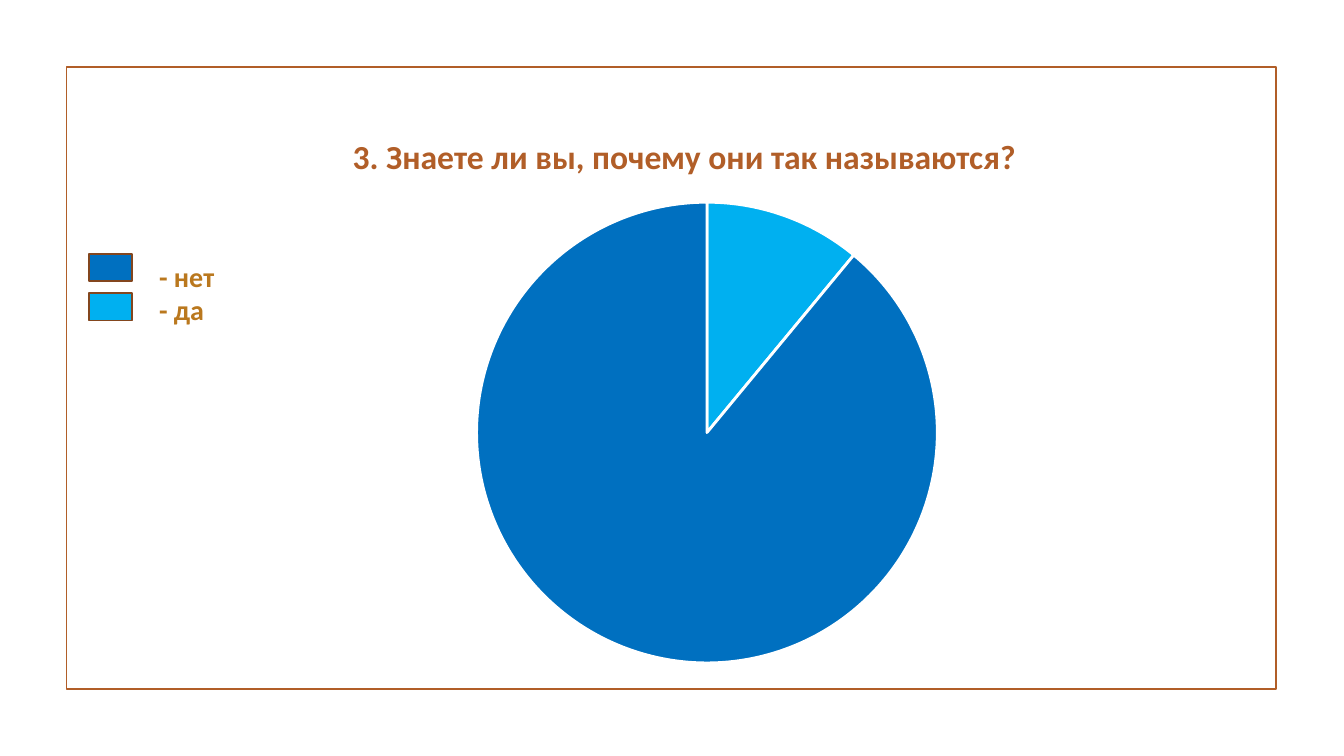
from pptx import Presentation
from pptx.chart.data import CategoryChartData
from pptx.dml.color import RGBColor
from pptx.enum.chart import XL_CHART_TYPE
from pptx.enum.shapes import MSO_SHAPE
from pptx.enum.text import MSO_AUTO_SIZE, PP_ALIGN
from pptx.util import Pt

PIE = XL_CHART_TYPE.PIE
RECT = MSO_SHAPE.RECTANGLE
GROW = MSO_AUTO_SIZE.SHAPE_TO_FIT_TEXT
LEFT, CENTER = PP_ALIGN.LEFT, PP_ALIGN.CENTER

RUST, BROWN, OCHRE = "B15E28", "83461E", "BA781E"
BLUE, SKY, WHITE, BLACK = "0070C0", "00B0F0", "FFFFFF", "000000"


def color(value):
    return RGBColor.from_string(value)


class SlideBuilder:
    font = "Calibri"
    line_width = 1.25

    def __init__(self, slide):
        self.s = slide

    def rect(self, x, y, w, h, line, fill=None):
        sp = self.s.shapes.add_shape(RECT, Pt(x), Pt(y), Pt(w), Pt(h))
        sp.shadow.inherit = False
        if fill:
            sp.fill.solid()
            sp.fill.fore_color.rgb = color(fill)
        else:
            sp.fill.background()
        sp.line.color.rgb = color(line)
        sp.line.width = Pt(self.line_width)

    def text(self, x, y, w, h, lines, size, ink, align=LEFT):
        sp = self.s.shapes.add_textbox(Pt(x), Pt(y), Pt(w), Pt(h))
        tf = sp.text_frame
        tf.word_wrap = True
        tf.auto_size = GROW
        tf.text = "\n".join(lines)
        for p in tf.paragraphs:
            p.alignment = align
            for r in p.runs:
                r.font.name = self.font
                r.font.size = Pt(size)
                r.font.bold = True
                r.font.color.rgb = color(ink)

    def pie(self, x, y, w, h, values, fills):
        data = CategoryChartData()
        data.categories = [str(i + 1) for i in range(len(values))]
        data.add_series("Series 1", values)
        chart = self.s.shapes.add_chart(
            PIE, Pt(x), Pt(y), Pt(w), Pt(h), data).chart
        chart.has_title = False
        chart.has_legend = False
        chart.font.name = self.font
        chart.font.size = Pt(10)
        chart.font.color.rgb = color(BLACK)
        plot = chart.plots[0]
        plot.vary_by_categories = True
        for i, fill in enumerate(fills):
            fmt = plot.series[0].points[i].format
            fmt.fill.solid()
            fmt.fill.fore_color.rgb = color(fill)
            fmt.line.color.rgb = color(WHITE)
            fmt.line.width = Pt(2)


def main():
    prs = Presentation()
    prs.slide_width, prs.slide_height = Pt(960), Pt(540)
    b = SlideBuilder(prs.slides.add_slide(prs.slide_layouts[6]))

    # Frame
    b.rect(47.5, 48, 864, 444, RUST)

    # Chart and its heading
    b.pie(209, 134.5, 592, 349, (11, 89), (SKY, BLUE))
    b.text(169, 93.5, 639.5, 36,
           ["3. Знаете ли вы, почему они так называются?"], 24, RUST, CENTER)

    # Legend
    for i, fill in enumerate((BLUE, SKY)):
        b.rect(63.5, 181.5 + 28 * i, 31, 19.5, BROWN, fill)
    b.text(106.5, 181.5, 96, 55.5, ["- нет", "- да"], 20, OCHRE)

    prs.save("out.pptx")


if __name__ == "__main__":
    main()
